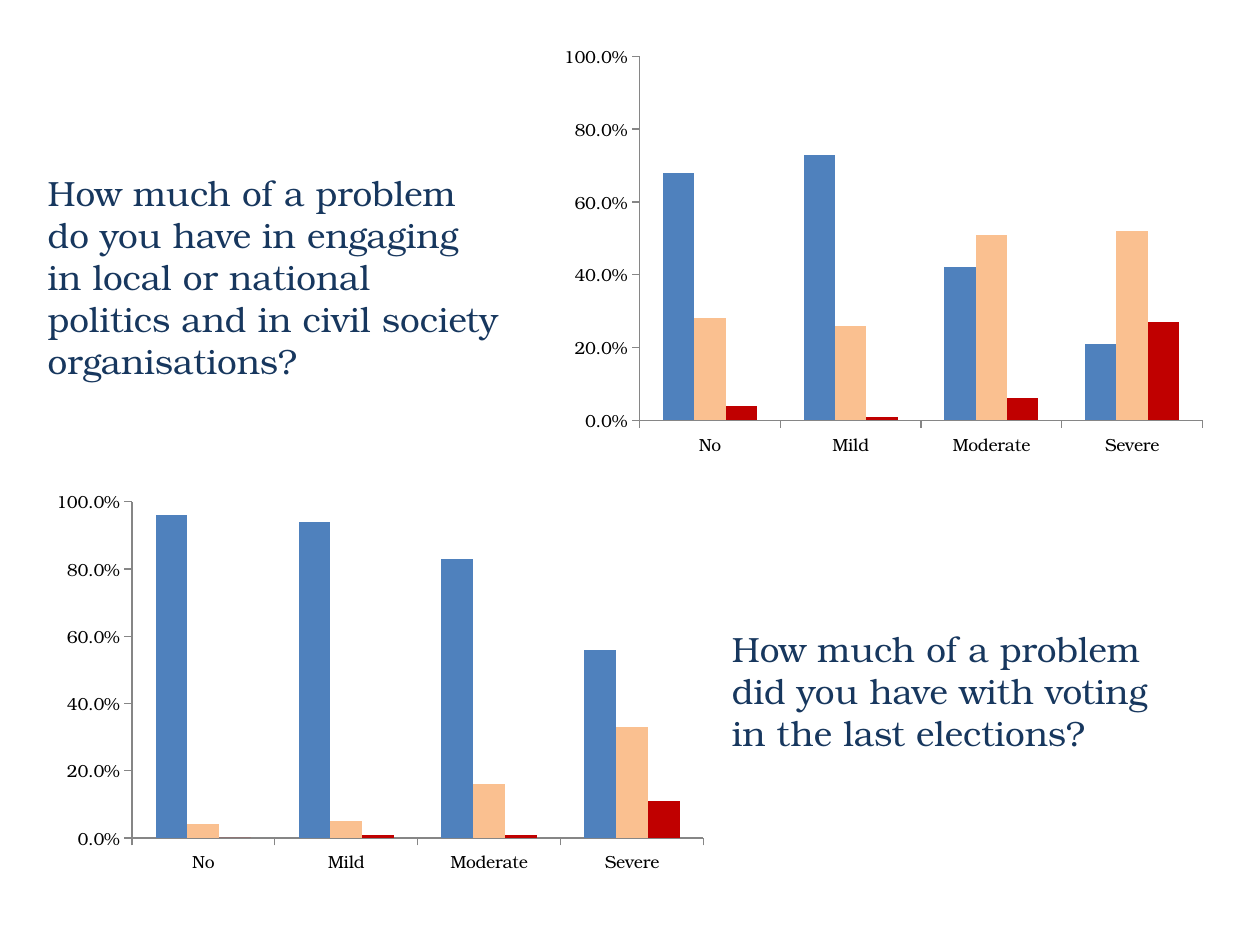
from dataclasses import dataclass

from pptx import Presentation
from pptx.chart.data import CategoryChartData
from pptx.dml.color import RGBColor
from pptx.enum import chart as ch, text
from pptx.util import Inches, Pt


@dataclass(frozen=True)
class Theme:
    font: str = "TeX Gyre Bonum"
    chart_font: str = "Calibri"
    question: RGBColor = RGBColor(0x17, 0x37, 0x5E)
    label: RGBColor = RGBColor(0, 0, 0)
    axis: RGBColor = RGBColor(0x86, 0x86, 0x86)
    bars: tuple = (RGBColor(0x4F, 0x81, 0xBD),
                   RGBColor(0xFA, 0xC0, 0x90),
                   RGBColor(0xC0, 0, 0))
    question_size: Pt = Pt(20)
    label_size: Pt = Pt(10)


THEME = Theme()
SEVERITIES = ("No", "Mild", "Moderate", "Severe")

# One row per series, one value per severity
POLITICS = ((0.68, 0.73, 0.42, 0.21),
            (0.28, 0.26, 0.51, 0.52),
            (0.04, 0.01, 0.06, 0.27))
VOTING = ((0.96, 0.94, 0.83, 0.56),
          (0.04, 0.05, 0.16, 0.33),
          (0, 0.01, 0.01, 0.11))


def set_font(font, name, size, color):
    font.name, font.size, font.bold = name, size, False
    font.color.rgb = color


def add_question(slide, wording, left, top, width, height):
    box = slide.shapes.add_textbox(Inches(left), Inches(top),
                                   Inches(width), Inches(height))
    frame = box.text_frame
    frame.text = wording
    frame.word_wrap = True
    frame.auto_size = text.MSO_AUTO_SIZE.SHAPE_TO_FIT_TEXT
    paragraph = frame.paragraphs[0]
    paragraph.space_after = Pt(12)
    set_font(paragraph.runs[0].font, THEME.font, THEME.question_size, THEME.question)


def style_axis(axis):
    axis.has_major_gridlines = False
    axis.major_tick_mark = ch.XL_TICK_MARK.OUTSIDE
    axis.minor_tick_mark = ch.XL_TICK_MARK.NONE
    axis.format.line.color.rgb = THEME.axis
    axis.format.line.width = Pt(0.75)
    set_font(axis.tick_labels.font, THEME.font, THEME.label_size, THEME.label)


def add_severity_chart(slide, rows, left, top, width, height):
    data = CategoryChartData(number_format="0.0%")
    data.categories = SEVERITIES
    for number, values in enumerate(rows, 1):
        data.add_series(f"Series {number}", values)
    chart = slide.shapes.add_chart(
        ch.XL_CHART_TYPE.COLUMN_CLUSTERED, Inches(left), Inches(top),
        Inches(width), Inches(height), data).chart
    chart.has_legend = False
    chart.has_title = False
    set_font(chart.font, THEME.chart_font, THEME.label_size, THEME.label)

    # Axes
    style_axis(chart.category_axis)
    percent = chart.value_axis
    style_axis(percent)
    percent.minimum_scale, percent.maximum_scale = 0, 1
    percent.major_unit = 0.2
    percent.tick_labels.number_format = "0.0%"
    percent.tick_labels.number_format_is_linked = False

    # Bars
    plot = chart.plots[0]
    plot.gap_width, plot.overlap = 150, 0
    plot.vary_by_categories = False
    for series, color in zip(plot.series, THEME.bars):
        series.format.fill.solid()
        series.format.fill.fore_color.rgb = color
        series.invert_if_negative = False


def main():
    prs = Presentation()
    prs.slide_width, prs.slide_height = Inches(10), Inches(7.5)
    slide = prs.slides.add_slide(prs.slide_layouts[6])

    # Political engagement: question on the left, answers on the right
    add_question(slide, "How much of a problem do you have in engaging in local or "
                 "national politics and in civil society organisations?",
                 0.28, 1.31, 3.78, 1.78)
    add_severity_chart(slide, POLITICS, 4.37, 0.29, 5.28, 3.39)

    # Voting: answers on the left, question on the right
    add_severity_chart(slide, VOTING, 0.34, 3.83, 5.35, 3.16)
    add_question(slide, "How much of a problem did you have with voting "
                 "in the last elections?", 5.71, 4.93, 3.78, 1.11)

    prs.save("out.pptx")


if __name__ == "__main__":
    main()
